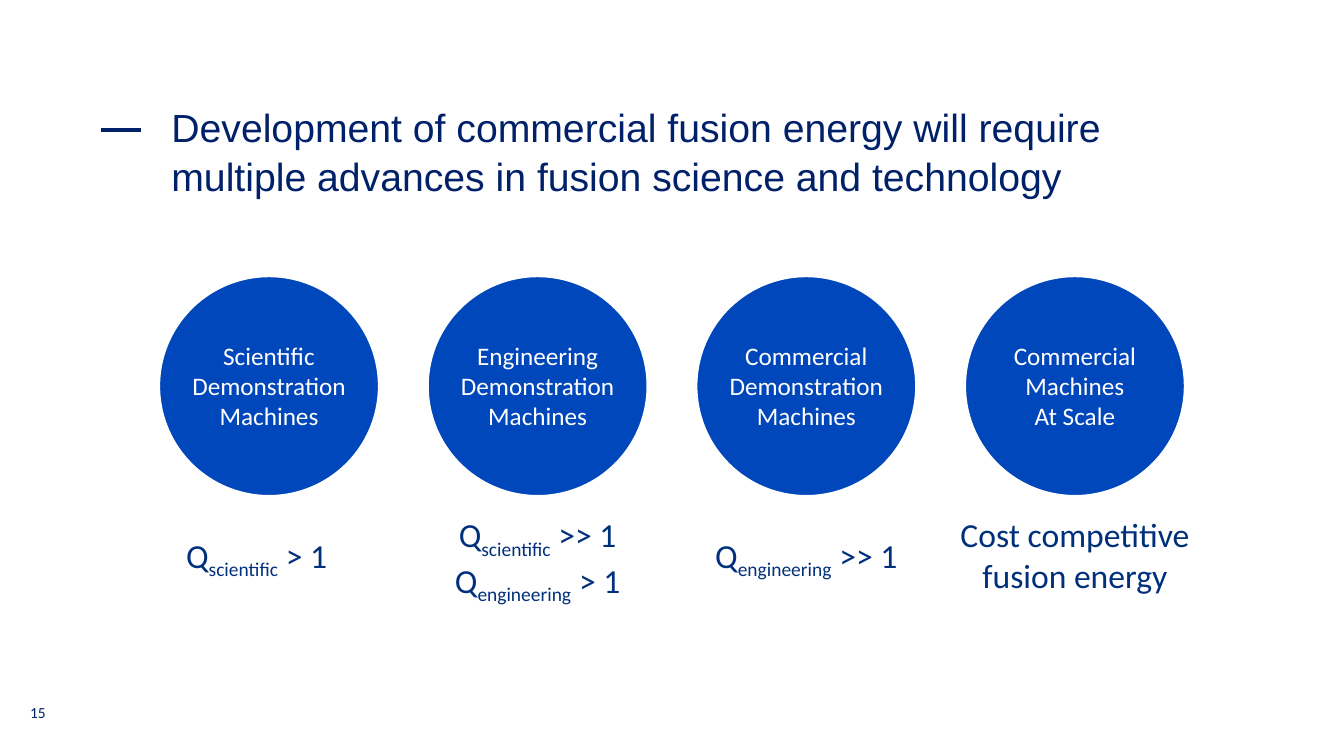
from lxml.etree import SubElement
from pptx import Presentation
from pptx.dml.color import RGBColor
from pptx.enum.shapes import MSO_CONNECTOR, MSO_SHAPE
from pptx.enum.text import MSO_ANCHOR, PP_ALIGN
from pptx.oxml.ns import qn
from pptx.util import Cm, Pt

TITLE = ("Development of commercial fusion energy will require "
         "multiple advances in fusion science and technology")
NUMBER = "15"
LEFT, MID = PP_ALIGN.LEFT, PP_ALIGN.CENTER

# Circle label; caption paragraphs of (text, is subscript) runs;
# caption centre offset, width and alignment
STAGES = [
    ("Scientific\vDemonstration\vMachines",
     [[("Q", False), ("scientific", True), (" > 1", False)]],
     -0.08, 4.52, LEFT),
    ("Engineering\vDemonstration\vMachines",
     [[("Q", False), ("scientific", True), (" >> 1", False)],
      [("Q", False), ("engineering", True), (" > 1", False)]],
     0, 6.15, MID),
    ("Commercial\vDemonstration\vMachines",
     [[("Q", False), ("engineering", True), (" >> 1", False)]],
     0, 7.62, MID),
    ("Commercial\vMachines\vAt Scale",
     [[("Cost competitive\vfusion energy", False)]],
     0, 7.62, MID),
]

COLORS = {"navy": "002169", "blue": "0047BB", "ink": "00307C", "white": "FFFFFF"}
FORMATS = {
    "title": ({"name": "Arial", "size": Pt(28)}, "navy"),
    "number": ({"name": "Calibri", "size": Pt(11)}, "navy"),
    "label": ({"name": "Calibri", "size": Pt(18)}, "white"),
    "caption": ({"name": "Calibri", "size": Pt(24)}, "ink"),
}
FIRST, PITCH = 6.78, 6.77  # centre of the first circle, step to the next
TOP, SIZE = 6.96, 5.54
LABEL_W, LABEL_H = 4.72, 2.57
CAPTION_Y = 13.98
INSETS = (0.25, 0.13)


def color(name):
    return RGBColor.from_string(COLORS[name])


def write(slide, box, paras, style, align=LEFT, insets=INSETS, wrap=True):
    """Add a text box; each paragraph is a list of (text, is subscript)."""
    frame = slide.shapes.add_textbox(*map(Cm, box)).text_frame
    side, edge = map(Cm, insets)
    layout = {"word_wrap": wrap, "vertical_anchor": MSO_ANCHOR.TOP,
              "margin_left": side, "margin_right": side,
              "margin_top": edge, "margin_bottom": edge}
    for key, value in layout.items():
        setattr(frame, key, value)
    values, tint = FORMATS[style]
    for i, runs in enumerate(paras):
        para = frame.add_paragraph() if i else frame.paragraphs[0]
        para.alignment = align
        for text, sub in runs:
            for j, line in enumerate(text.split("\v")):
                if j:
                    para.add_line_break()
                run = para.add_run()
                run.text = line
                for key, value in values.items():
                    setattr(run.font, key, value)
                run.font.color.rgb = color(tint)
                if sub:
                    run.font._element.set("baseline", "-25000")
    return frame


def add_dash(slide):
    dash = slide.shapes.add_connector(
        MSO_CONNECTOR.STRAIGHT, Cm(2.54), Cm(3.28), Cm(3.56), Cm(3.28))
    dash.line.color.rgb = color("navy")
    dash.line.width = Pt(2.5)
    SubElement(dash._element.spPr, qn("a:effectLst"))


def add_stage(slide, mid, stage):
    label, paras, shift, width, align = stage
    disc = slide.shapes.add_shape(
        MSO_SHAPE.OVAL, Cm(mid - SIZE / 2), Cm(TOP), Cm(SIZE), Cm(SIZE))
    disc.shadow.inherit = False
    disc.fill.solid()
    disc.fill.fore_color.rgb = color("blue")
    disc.line.color.rgb = color("white")
    disc.line.width = Pt(1.5)
    write(slide, (mid - LABEL_W / 2, TOP + (SIZE - LABEL_H) / 2, LABEL_W, LABEL_H),
          [[(label, False)]], "label", MID, wrap=False)
    lines = sum(para[0][0].count("\v") + 1 for para in paras)
    height = 0.25 + 1.03 * lines
    write(slide, (mid + shift - width / 2, CAPTION_Y - height / 2, width, height),
          paras, "caption", align)


def main():
    deck = Presentation()
    deck.slide_width, deck.slide_height = Cm(33.87), Cm(19.05)
    slide = deck.slides.add_slide(deck.slide_layouts[6])
    add_dash(slide)
    title = write(slide, (4.32, 2.54, 26.75, 2.39), [[(TITLE, False)]],
                  "title", insets=(0, 0))
    title.paragraphs[0].line_spacing = 1.05
    write(slide, (0.76, 17.6, 1.22, 1.02), [[(NUMBER, False)]],
          "number", insets=(0, 0.13))
    for i, stage in enumerate(STAGES):
        add_stage(slide, FIRST + i * PITCH, stage)
    deck.save("out.pptx")


if __name__ == "__main__":
    main()
